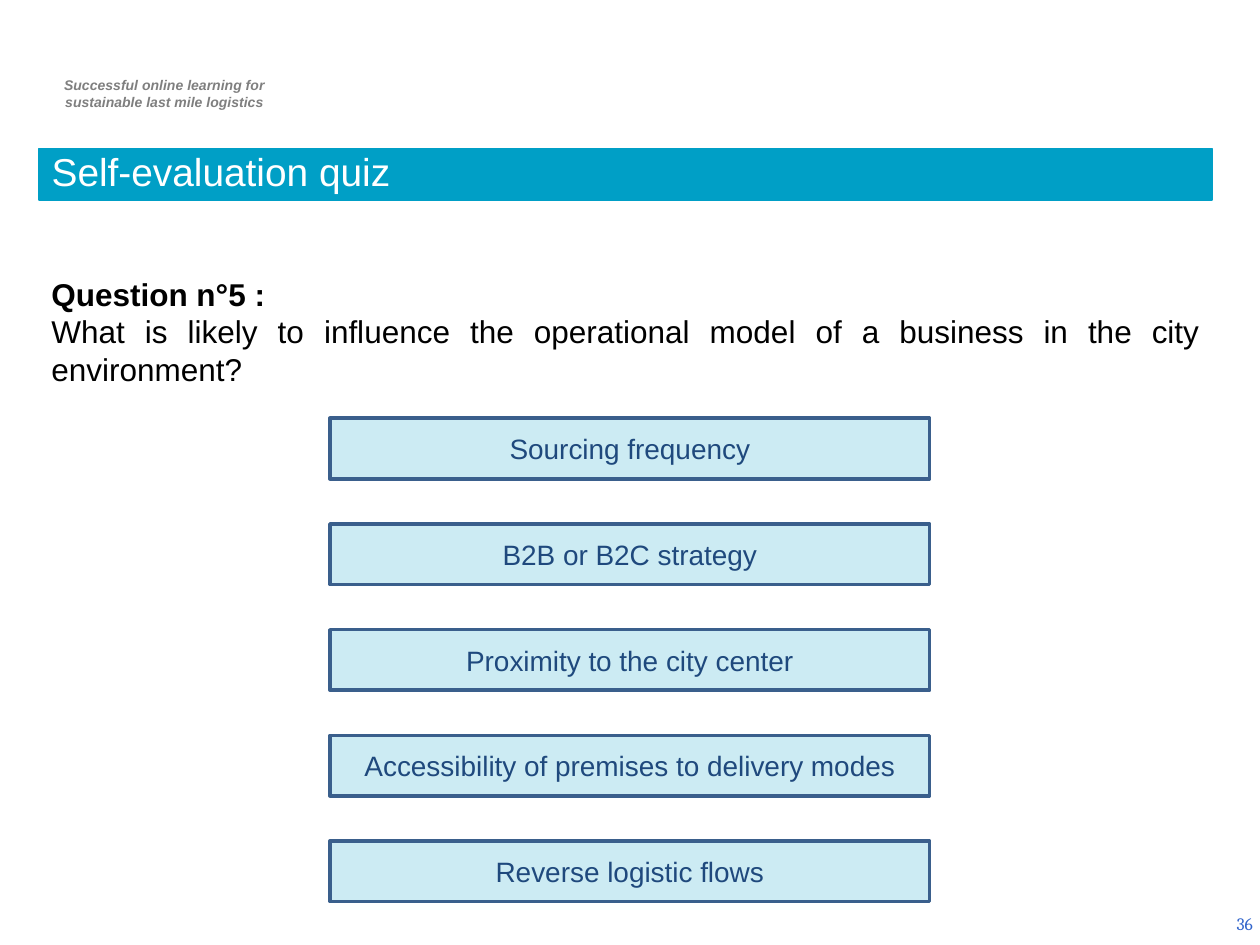
from dataclasses import dataclass

from lxml.etree import SubElement
from pptx import Presentation
from pptx.dml.color import RGBColor as RGB
from pptx.enum.shapes import MSO_SHAPE as SHAPE
from pptx.enum.text import MSO_ANCHOR as ANCHOR, MSO_AUTO_SIZE as AUTO, PP_ALIGN as ALIGN
from pptx.oxml.ns import qn
from pptx.util import Pt


@dataclass(frozen=True)
class Theme:
    font: str = "Arial"
    number_font: str = "Cambria"
    accent: RGB = RGB(0x00, 0x9F, 0xC6)
    border: RGB = RGB(0x3A, 0x5F, 0x8C)
    option: RGB = RGB(0x1F, 0x49, 0x7D)
    muted: RGB = RGB(0x7F, 0x7F, 0x7F)
    number: RGB = RGB(0x33, 0x66, 0xCC)
    black: RGB = RGB(0, 0, 0)
    white: RGB = RGB(255, 255, 255)
    title_size: float = 22.2
    body_size: float = 18
    option_size: float = 16
    number_size: float = 10
    tagline_size: float = 8


class QuizSlide:
    def __init__(self, prs, theme):
        self.theme = theme
        self.slide = prs.slides.add_slide(prs.slide_layouts[5])

    def format(self, p, size, color, align=ALIGN.LEFT, font=None, bold=False, italic=False):
        p.alignment = align
        for r in p.runs:
            f = r.font
            f.name, f.size, f.color.rgb = font or self.theme.font, Pt(size), color
            f.bold, f.italic = bold, italic

    def title(self, text, box):
        t, sp = self.theme, self.slide.shapes.title
        sp.left, sp.top, sp.width, sp.height = map(Pt, box)
        sp.fill.solid()
        sp.fill.fore_color.rgb = sp.line.color.rgb = t.accent
        sp.line.width = Pt(0.75)
        tf = sp.text_frame
        tf.text = text
        tf.auto_size, tf.vertical_anchor = AUTO.NONE, ANCHOR.BOTTOM
        p = tf.paragraphs[0]
        p.line_spacing = 0.8
        self.format(p, t.title_size, t.white)

    def text(self, text, box, size, color, anchor=ANCHOR.TOP, **style):
        """Add a text box with one paragraph per line and return its paragraphs."""
        tf = self.slide.shapes.add_textbox(*map(Pt, box)).text_frame
        tf.text = text
        tf.word_wrap, tf.vertical_anchor = True, anchor
        for p in tf.paragraphs:
            self.format(p, size, color, **style)
        return tf.paragraphs

    def question(self, heading, body, box):
        t = self.theme
        first, second = self.text(f"{heading}\n{body}", box, t.body_size, t.black)
        first.runs[0].font.bold = True
        second.alignment = ALIGN.JUSTIFY

    def option(self, text, box):
        t = self.theme
        sp = self.slide.shapes.add_shape(SHAPE.RECTANGLE, *map(Pt, box))
        sp.shadow.inherit = False
        sp.fill.solid()
        sp.fill.fore_color.rgb = t.accent
        color = sp.fill._xPr.find(qn("a:solidFill"))[0]
        SubElement(color, qn("a:alpha")).set("val", "20000")
        sp.line.color.rgb, sp.line.width = t.border, Pt(2)
        tf = sp.text_frame
        tf.text = text
        tf.vertical_anchor = ANCHOR.MIDDLE
        self.format(tf.paragraphs[0], t.option_size, t.option, ALIGN.CENTER)


OPTIONS = (
    "Sourcing frequency",
    "B2B or B2C strategy",
    "Proximity to the city center",
    "Accessibility of premises to delivery modes",
    "Reverse logistic flows",
)
LEFT, WIDTH = 22.3, 670.3
OPTION_TOP, OPTION_PITCH = 239, 60.4


def main():
    prs = Presentation()
    prs.slide_width, prs.slide_height = Pt(720), Pt(540)
    t = Theme()
    s = QuizSlide(prs, t)
    s.text("Successful online learning for\nsustainable last mile logistics",
           (21, 40.3, 146, 26.6), t.tagline_size, t.muted,
           align=ALIGN.CENTER, bold=True, italic=True)
    s.text("36", (555, 513.4, 168, 28.8), t.number_size, t.number,
           anchor=ANCHOR.MIDDLE, align=ALIGN.RIGHT, font=t.number_font)
    s.title("Self-evaluation quiz", (LEFT, 84.8, WIDTH, 29.5))
    s.question("Question n°5 :",
               "What is likely to influence the operational model of a business"
               " in the city environment?",
               (LEFT, 153.4, WIDTH, 72.7))
    for i, text in enumerate(OPTIONS):
        s.option(text, (188.6, OPTION_TOP + i * OPTION_PITCH, 342.7, 34.6))
    prs.save("out.pptx")


if __name__ == "__main__":
    main()
